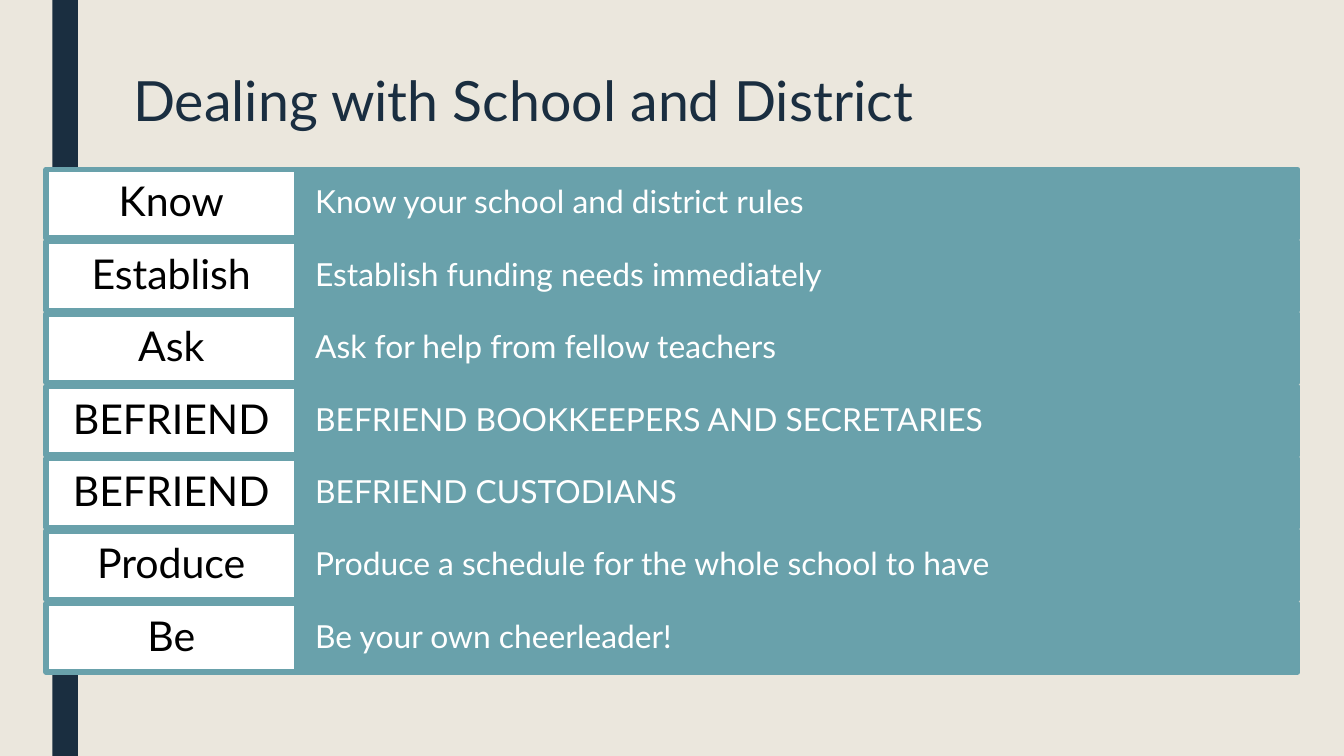
from pptx import Presentation
from pptx.dml.color import RGBColor
from pptx.enum.shapes import MSO_SHAPE
from pptx.enum.text import MSO_ANCHOR, PP_ALIGN
from pptx.util import Inches, Pt

RECTANGLE = MSO_SHAPE.RECTANGLE
TOP, MIDDLE = MSO_ANCHOR.TOP, MSO_ANCHOR.MIDDLE
LEFT, CENTER = PP_ALIGN.LEFT, PP_ALIGN.CENTER

WIDTH = 10
HEIGHT = WIDTH * 9 / 16
COLUMN, ROW = WIDTH / 100, HEIGHT / 100
FONT = "Lato"
COLORS = {
    "sand": "EBE7DD",
    "navy": "1A2E40",
    "teal": "69A1AB",
    "white": "FFFFFF",
    "black": "000000",
}
ADVICE = [
    ("Know", "Know your school and district rules"),
    ("Establish", "Establish funding needs immediately"),
    ("Ask", "Ask for help from fellow teachers"),
    ("BEFRIEND", "BEFRIEND BOOKKEEPERS AND SECRETARIES"),
    ("BEFRIEND", "BEFRIEND CUSTODIANS"),
    ("Produce", "Produce a schedule for the whole school to have"),
    ("Be", "Be your own cheerleader!"),
]
LABEL_SHARE = 0.2
ROW_FILL = 0.95


def rgb(name):
    return RGBColor.from_string(COLORS[name])


def grid_box(left, top, columns, rows):
    return left * COLUMN, top * ROW, columns * COLUMN, rows * ROW


def write(shape, text, size, color, align, anchor, inset_x, inset_y, spacing):
    frame = shape.text_frame
    frame.word_wrap = True
    frame.vertical_anchor = anchor
    frame.margin_left = frame.margin_right = Inches(inset_x)
    frame.margin_top = frame.margin_bottom = Inches(inset_y)
    paragraph = frame.paragraphs[0]
    paragraph.text = text
    paragraph.alignment = align
    paragraph.line_spacing = spacing
    paragraph.font.name = FONT
    paragraph.font.size = Pt(size)
    paragraph.font.color.rgb = rgb(color)


def add_block(slide, box, fill, border=None):
    block = slide.shapes.add_shape(RECTANGLE, *map(Inches, box))
    block.shadow.inherit = False
    block.fill.solid()
    block.fill.fore_color.rgb = rgb(fill)
    if border:
        block.line.color.rgb = rgb(border)
        block.line.width = Pt(2.75)
    else:
        block.line.fill.background()
    return block


def place_title(slide, box, text):
    title = slide.shapes.title
    title.left, title.top, title.width, title.height = map(Inches, box)
    write(title, text, 29.7, "navy", LEFT, TOP, 0.1, 0.1, 0.89)


def place_advice(slide, box, advice):
    left, top, width, height = box
    pitch = height / (len(advice) - 1 + ROW_FILL)
    row_height = pitch * ROW_FILL
    label_width = width * LABEL_SHARE
    for row, (verb, sentence) in enumerate(advice):
        y = top + row * pitch
        detail = add_block(
            slide,
            (left + label_width, y, width - label_width, row_height),
            "teal",
            "teal",
        )
        write(detail, sentence, 17, "white", LEFT, MIDDLE, 0.14, 0.13, 0.9)
        label = add_block(
            slide, (left, y, label_width, row_height), "white", "teal"
        )
        write(label, verb, 22, "black", CENTER, MIDDLE, 0.1, 0.05, 0.9)


def main():
    deck = Presentation()
    deck.slide_width, deck.slide_height = Inches(WIDTH), Inches(HEIGHT)
    slide = deck.slides.add_slide(deck.slide_layouts.get_by_name("Title Only"))
    slide.background.fill.solid()
    slide.background.fill.fore_color.rgb = rgb("sand")

    add_block(slide, grid_box(3.9, 0, 1.9, 100), "navy")
    place_title(
        slide, grid_box(8.9, 8, 93.2, 11.2), "Dealing with School and District"
    )
    place_advice(slide, grid_box(3.42, 22.4, 93.16, 66.5), ADVICE)
    deck.save("out.pptx")


if __name__ == "__main__":
    main()
